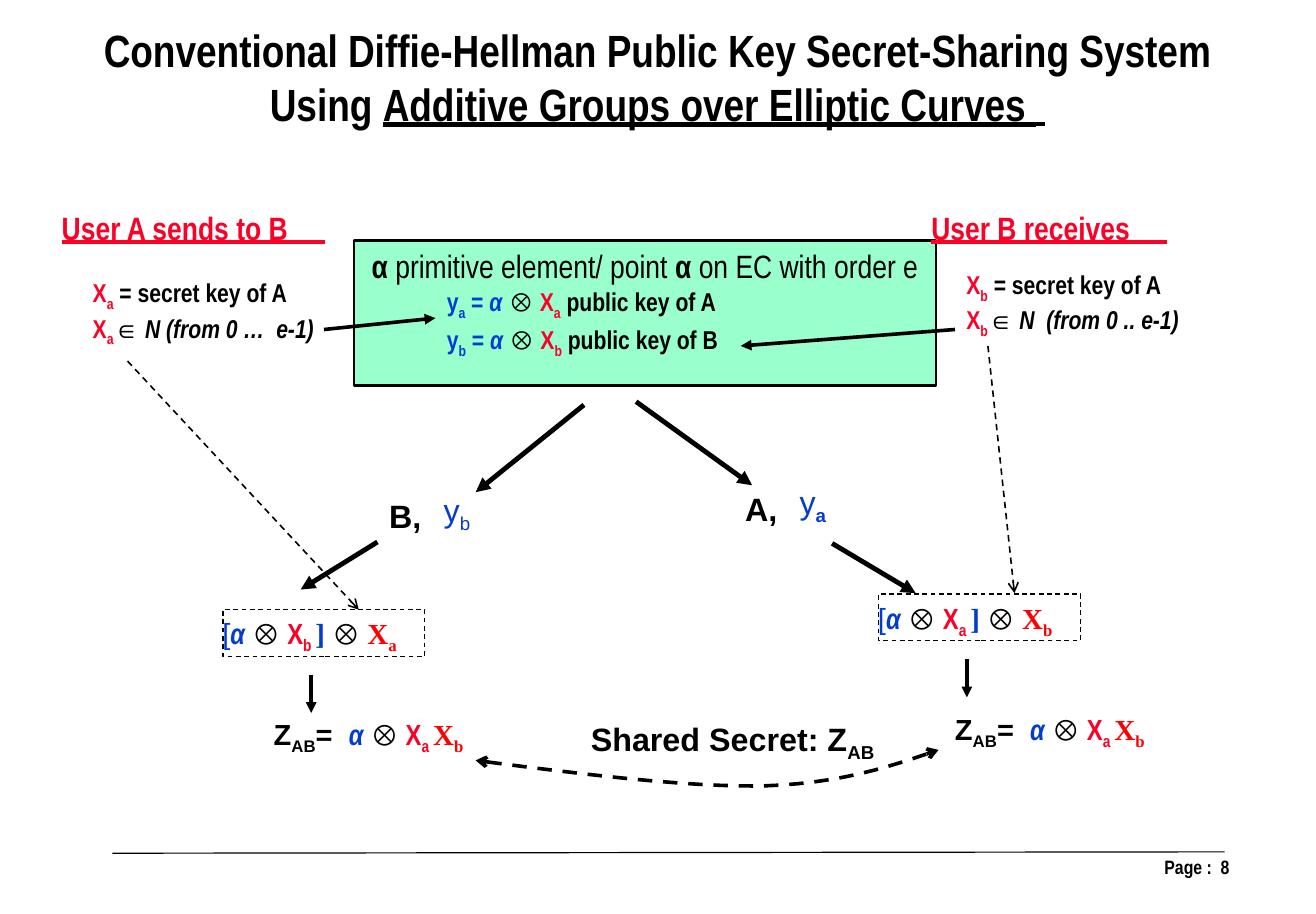
import collections

import lxml.etree
import pptx
import pptx.dml.color
import pptx.enum.dml
import pptx.enum.shapes
import pptx.enum.text
import pptx.oxml.ns
import pptx.util

Cm = pptx.util.Cm
Pt = pptx.util.Pt
Box = collections.namedtuple("Box", "left top width height")
ALIGN = pptx.enum.text.PP_ALIGN
ANCHOR = pptx.enum.text.MSO_ANCHOR

BLACK = pptx.dml.color.RGBColor(0x00, 0x00, 0x00)
BLUE = pptx.dml.color.RGBColor(0x02, 0x3D, 0xD0)
CRIMSON = pptx.dml.color.RGBColor(0xFC, 0x01, 0x28)
RED = pptx.dml.color.RGBColor(0xFF, 0x00, 0x00)
MINT = pptx.dml.color.RGBColor(0x99, 0xFF, 0xCC)

SANS = "Arial"
NARROW = "Arial Narrow"
SERIF = "Times New Roman"


def styled(text, **style):
    return text, style


ALPHA = styled("α ", color=BLUE, italic=True)
TIMES = styled("⊗ ")


def indexed(letter, index, **style):
    return [styled(letter, **style), styled(index, sub=True, **style)]


def add_text(page, box, *paragraphs, size=18, font=NARROW, color=BLACK, bold=True,
             underline=False, align=ALIGN.LEFT, anchor=ANCHOR.TOP, wrap=True, inset=(0.25, 0.13)):
    shape = page.shapes.add_textbox(*map(Cm, box))
    frame = shape.text_frame
    frame.word_wrap = wrap
    frame.auto_size = pptx.enum.text.MSO_AUTO_SIZE.SHAPE_TO_FIT_TEXT
    frame.vertical_anchor = anchor
    frame.margin_left = frame.margin_right = Cm(inset[0])
    frame.margin_top = frame.margin_bottom = Cm(inset[1])
    for number, spans in enumerate(paragraphs):
        para = frame.add_paragraph() if number else frame.paragraphs[0]
        para.alignment = align
        for text, style in spans:
            span = para.add_run()
            span.text = text
            span.font.size = Pt(style.get("size", size))
            span.font.name = style.get("font", font)
            span.font.bold = style.get("bold", bold)
            span.font.italic = style.get("italic", False)
            span.font.underline = style.get("underline", underline)
            span.font.color.rgb = style.get("color", color)
            if style.get("sub"):
                span._r.get_or_add_rPr().set("baseline", "-25000")


def format_line(line, width, dashed=False, **ends):
    line.color.rgb = BLACK
    line.width = Pt(width)
    if dashed:
        line.dash_style = pptx.enum.dml.MSO_LINE.DASH
    for end, kind in ends.items():
        tag = pptx.oxml.ns.qn("a:" + end)
        lxml.etree.SubElement(line._get_or_add_ln(), tag).set("type", kind)


def add_line(page, start, end, width, **style):
    connector = page.shapes.add_connector(
        pptx.enum.shapes.MSO_CONNECTOR.STRAIGHT, *map(Cm, start + end))
    format_line(connector.line, width, **style)
    lxml.etree.SubElement(connector._element.spPr, pptx.oxml.ns.qn("a:effectLst"))


def add_arrow(page, start, end, width):
    add_line(page, start, end, width, tailEnd="triangle")


def add_frame(page, box, width, fill=None, dashed=False):
    shape = page.shapes.add_shape(pptx.enum.shapes.MSO_SHAPE.RECTANGLE, *map(Cm, box))
    shape.shadow.inherit = False
    if fill is None:
        shape.fill.background()
    else:
        shape.fill.solid()
        shape.fill.fore_color.rgb = fill
    format_line(shape.line, width, dashed)


def draw_heading(page, box):
    add_text(page, box, [
        styled("Conventional Diffie-Hellman Public Key Secret-Sharing System Using "),
        styled("Additive Groups over Elliptic Curves ", underline=True),
        styled(" ", size=24, underline=True)], size=28, align=ALIGN.CENTER)


def draw_footer(page, box):
    add_line(page, (box.left, box.top + 0.03), (box.left + box.width, box.top), 0.75)
    label = Box(box.left + 18.2, box.top - 0.07, 6.55, box.height)
    add_text(page, label, [styled("Page :  8")], size=12,
             align=ALIGN.RIGHT, inset=(0.3, 0.15))


def draw_public_keys(page, box):
    add_frame(page, box, 1.5, fill=MINT)
    add_text(page, box._replace(height=1.12), [
        styled("α"), styled(" primitive element/ point ", bold=False),
        styled("α"), styled(" on EC with order e", bold=False)],
        size=20, align=ALIGN.CENTER, anchor=ANCHOR.MIDDLE, wrap=False)
    for row, user in enumerate("ab"):
        add_text(page, Box(box.left + 1.78, box.top + 0.91 + 0.84 * row, 8.46, 0.94),
                 indexed("y", user, color=BLUE) + [styled(" = ", color=BLUE), ALPHA, TIMES]
                 + indexed("X", user, color=CRIMSON) + [styled(f" public key of {user.upper()}")],
                 size=16, anchor=ANCHOR.MIDDLE)


def draw_user(page, box, title, title_box, user, key_range):
    add_text(page, title_box, [styled(title)], size=20, color=CRIMSON,
             underline=True, align=ALIGN.CENTER)
    key = indexed("X", user, color=CRIMSON)
    add_text(page, box, key + [styled(" = secret key of A")],
             key + [styled("∈ "), styled(key_range, italic=True)],
             size=16, anchor=ANCHOR.MIDDLE)


def draw_exchange(page, box, user, bold_index, arrows):
    for start, end in arrows:
        add_arrow(page, start, end, 3)
    add_text(page, box, [styled(user.upper() + ",")], size=20, font=SANS,
             align=ALIGN.CENTER, wrap=False)
    add_text(page, Box(box.left + 1.2, box.top - 0.15, 1.14, box.height),
             [styled("y", bold=False), styled(user, sub=True, bold=bold_index)],
             size=20, font=SANS, color=BLUE, wrap=False)


def draw_derivation(page, box, received, own, key_start, key_end, result_offset):
    add_frame(page, box, 0.75, dashed=True)
    add_text(page, Box(box.left - 0.81, box.top, 5.41, box.height),
             [styled("[", font=SANS, color=BLUE, bold=False), ALPHA, TIMES]
             + indexed("X", received + " ", color=CRIMSON)
             + [styled("]", font=SERIF, color=BLUE), styled(" ⊗ ")]
             + indexed("X", own, font=SERIF, color=RED), align=ALIGN.CENTER)
    middle = box.left + 1.93
    add_arrow(page, (middle, box.top + 1.42), (middle, box.top + 2.26), 2.25)
    add_line(page, key_start, key_end, 1, dashed=True, tailEnd="arrow")
    result = Box(box.left + result_offset[0], box.top + result_offset[1], 5.31, box.height)
    add_text(page, result, indexed("Z", "AB", font=SANS)
             + [styled("=  ", font=SANS), ALPHA, TIMES]
             + indexed("X", "a ", color=CRIMSON)
             + indexed("X", "b", font=SERIF, color=RED))


def bezier(points, steps=12):
    for step in range(1, steps + 1):
        t = step / steps
        weights = ((1 - t) ** 3, 3 * t * (1 - t) ** 2, 3 * t * t * (1 - t), t ** 3)
        yield tuple(Cm(sum(w * p[axis] for w, p in zip(weights, points))) for axis in (0, 1))


def draw_shared_secret(page, box):
    curve = [(0, 0.23), (2.29, 0.53), (4.57, 0.81), (6.25, 0.79),
             (7.95, 0.74), (9.04, 0.38), (10.13, 0)]
    curve = [(box.left + x, box.top + 0.81 + y) for x, y in curve]
    builder = page.shapes.build_freeform(Cm(curve[0][0]), Cm(curve[0][1]))
    builder.add_line_segments([*bezier(curve[:4]), *bezier(curve[3:])], close=False)
    arc = builder.convert_to_shape()
    arc.shadow.inherit = False
    arc.fill.background()
    format_line(arc.line, 2.25, dashed=True, headEnd="arrow", tailEnd="arrow")
    add_text(page, Box(box.left + 2.13, box.top, 6.99, 1.12),
             [styled("Shared Secret: ")] + indexed("Z", "AB"),
             size=20, font=SANS, align=ALIGN.CENTER)


def main():
    deck = pptx.Presentation()
    deck.slide_width, deck.slide_height = Cm(28.8), Cm(20)
    page = deck.slides.add_slide(deck.slide_layouts[6])
    draw_footer(page, Box(2.46, 18.64, 24.34, 1.32))
    draw_heading(page, Box(1.57, 0.36, 25.63, 2.64))
    draw_exchange(page, Box(8.26, 10.74, 1.22, 1.12), "b", False,
                  [((12.78, 8.86), (10.41, 10.77)), ((8.26, 11.86), (6.58, 12.9))])
    draw_exchange(page, Box(16.05, 10.57, 1.22, 1.12), "a", True,
                  [((13.92, 8.79), (16.46, 10.62)), ((18.21, 11.89), (20.04, 12.98))])
    draw_shared_secret(page, Box(10.41, 15.6, 10.16, 1.6))
    draw_public_keys(page, Box(7.75, 5.26, 12.73, 3.18))
    draw_user(page, Box(1.78, 6.02, 6.35, 1.63), "User A sends to B     ",
              Box(0, 4.42, 8.46, 1.09), "a", "N (from 0 …  e-1)")
    draw_user(page, Box(20.9, 5.84, 6.35, 1.63), "User B receives     ",
              Box(19.25, 4.42, 7.42, 1.09), "b", "N  (from 0 .. e-1)")
    add_arrow(page, (7.09, 7.21), (9.53, 6.96), 2.25)
    add_arrow(page, (20.9, 7.21), (16.21, 7.57), 2.25)
    draw_derivation(page, Box(4.88, 13.34, 4.42, 1.02), "b", "a",
                    (2.79, 7.9), (7.85, 13.34), (0.86, 2.21))
    draw_derivation(page, Box(19.23, 13, 4.42, 1.02), "a", "b",
                    (21.62, 7.57), (22.2, 12.98), (1.42, 2.44))
    deck.save("out.pptx")


if __name__ == "__main__":
    main()
